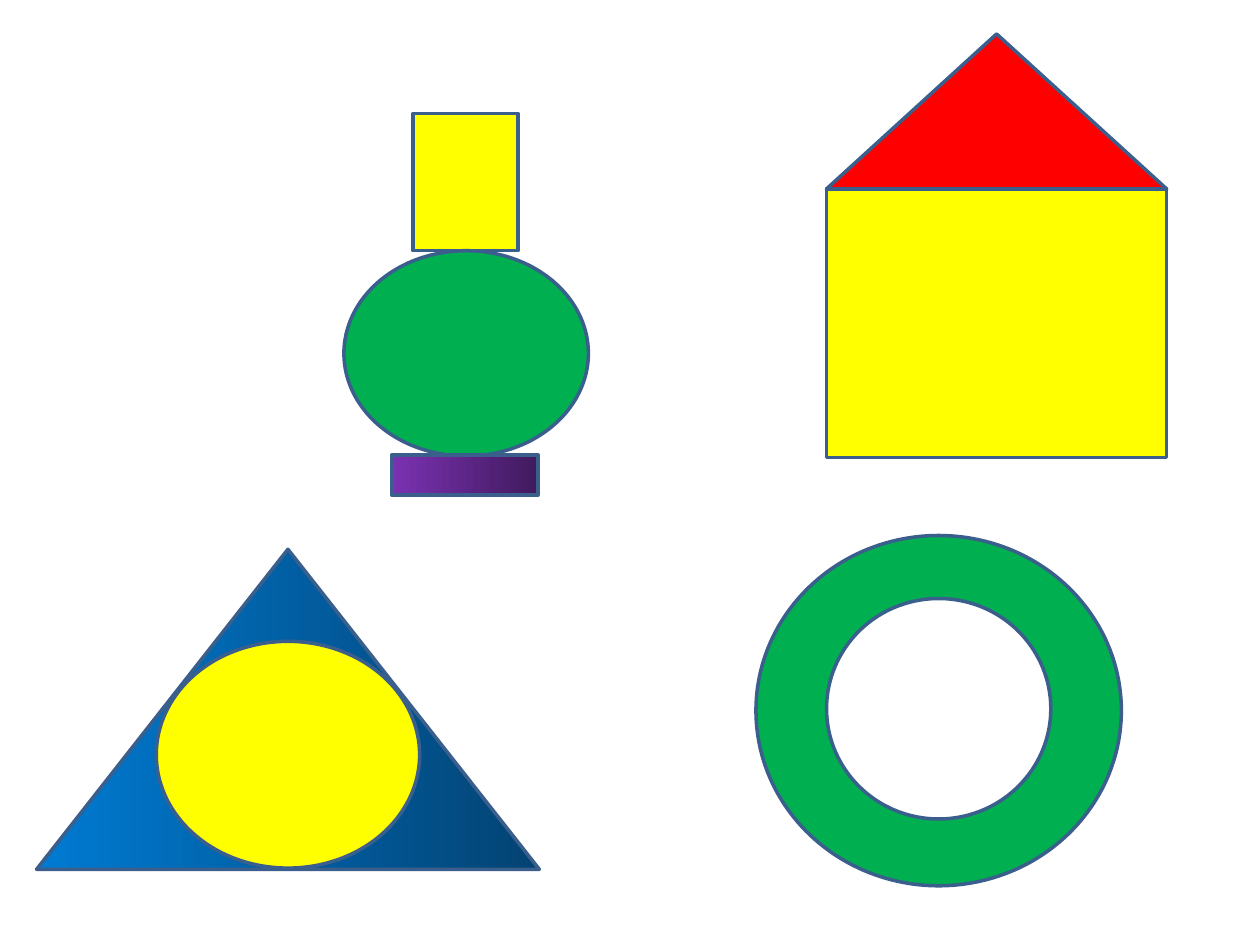
from dataclasses import dataclass

from pptx import Presentation
from pptx.dml.color import RGBColor
from pptx.enum.shapes import MSO_SHAPE
from pptx.util import Inches, Pt


@dataclass(frozen=True)
class Theme:
    yellow: str = "FFFF00"
    green: str = "00B050"
    red: str = "FF0000"
    white: str = "FFFFFF"
    purple: tuple[str, str] = ("7B32B2", "401A5D")
    blue: tuple[str, str] = ("007BD3", "034373")
    outline: str = "3A5F8C"
    outline_width: float = 2


@dataclass(frozen=True)
class Figure:
    """A preset shape, placed in inches; a pair of colours is a gradient."""
    kind: MSO_SHAPE
    left: float
    top: float
    width: float
    height: float
    fill: str | tuple[str, str]


THEME = Theme()
RECT, OVAL, TRIANGLE = MSO_SHAPE.RECTANGLE, MSO_SHAPE.OVAL, MSO_SHAPE.ISOSCELES_TRIANGLE

LAMP = [
    Figure(RECT, 3.28, 0.9, 0.83, 1.09, THEME.yellow),
    Figure(OVAL, 2.73, 1.99, 1.94, 1.63, THEME.green),
    Figure(RECT, 3.11, 3.61, 1.16, 0.32, THEME.purple),
]
HOUSE = [
    Figure(RECT, 6.56, 1.5, 2.7, 2.13, THEME.yellow),
    Figure(TRIANGLE, 6.56, 0.27, 2.7, 1.23, THEME.red),
]
CIRCLE_IN_TRIANGLE = [
    Figure(TRIANGLE, 0.29, 4.36, 3.99, 2.54, THEME.blue),
    Figure(OVAL, 1.24, 5.09, 2.09, 1.8, THEME.yellow),
]
RING = [
    Figure(OVAL, 6, 4.25, 2.9, 2.78, THEME.green),
    Figure(OVAL, 6.56, 4.75, 1.78, 1.75, THEME.white),
]


def draw_figure(s, fig: Figure) -> None:
    sp = s.shapes.add_shape(fig.kind, Inches(fig.left), Inches(fig.top),
                            Inches(fig.width), Inches(fig.height))
    sp.shadow.inherit = False
    if isinstance(fig.fill, tuple):
        sp.fill.gradient()
        sp.fill.gradient_angle = 0
        for stop, color in zip(sp.fill.gradient_stops, fig.fill):
            stop.color.rgb = RGBColor.from_string(color)
    else:
        sp.fill.solid()
        sp.fill.fore_color.rgb = RGBColor.from_string(fig.fill)
    sp.line.color.rgb = RGBColor.from_string(THEME.outline)
    sp.line.width = Pt(THEME.outline_width)


def main() -> None:
    prs = Presentation()
    prs.slide_width, prs.slide_height = Inches(10), Inches(7.5)
    s = prs.slides.add_slide(prs.slide_layouts[6])
    for fig in LAMP + HOUSE + CIRCLE_IN_TRIANGLE + RING:
        draw_figure(s, fig)
    prs.save("out.pptx")


if __name__ == "__main__":
    main()
